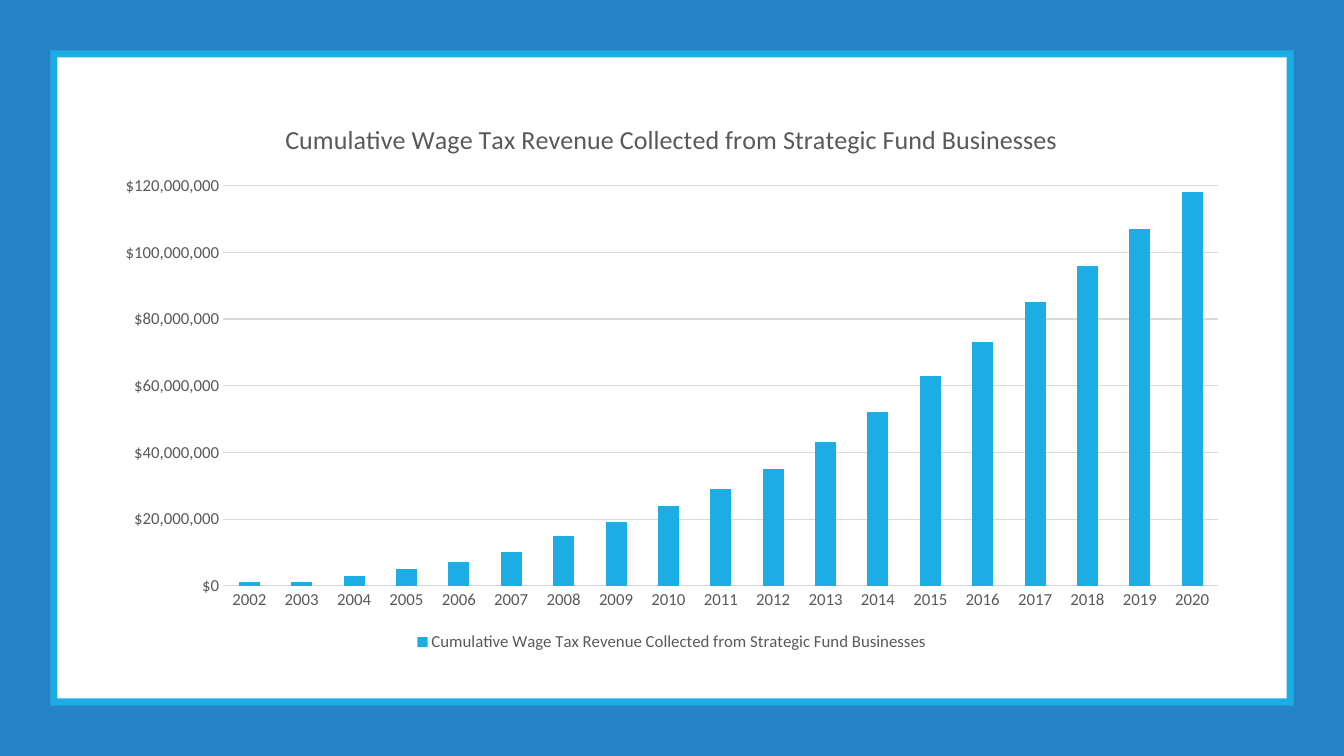
from pptx import Presentation
from pptx.chart.data import CategoryChartData as Data
from pptx.dml.color import RGBColor as Color
from pptx.enum.chart import XL_CHART_TYPE as Kind, XL_LEGEND_POSITION as Place
from pptx.enum.chart import XL_TICK_MARK as Tick
from pptx.enum.shapes import MSO_SHAPE as Shape
from pptx.util import Inches, Pt

WIDE, HIGH = 13.33, 7.5
BLUE, SKY, WHITE, GREY, RULE = "2683C6", "1CADE4", "FFFFFF", "595959", "D9D9D9"
NAME = "Cumulative Wage Tax Revenue Collected from Strategic Fund Businesses"
YEARS = range(2002, 2021)
MILLIONS = [1, 1, 3, 5, 7, 10, 15, 19, 24, 29, 35, 43, 52, 63, 73, 85, 96, 107, 118]


def paint(fmt, tone):
    fmt.solid()
    fmt.fore_color.rgb = Color.from_string(tone)


class Board:
    face = "Calibri"

    def __init__(self, deck):
        deck.slide_width, deck.slide_height = Inches(WIDE), Inches(HIGH)
        self.slide = deck.slides.add_slide(deck.slide_layouts[6])

    def inset(self, dx, dy):
        return [Inches(n) for n in (dx, dy, WIDE - 2 * dx, HIGH - 2 * dy)]

    def style(self, font, size):
        font.name, font.size, font.bold = self.face, Pt(size), False
        font.color.rgb = Color.from_string(GREY)

    def rule(self, line):
        paint(line.fill, RULE)
        line.width = Pt(0.75)

    def panel(self, gap, tone):
        box = self.slide.shapes.add_shape(Shape.RECTANGLE, *self.inset(gap, gap))
        box.shadow.inherit = False
        paint(box.fill, tone)
        box.line.fill.background()

    def axis(self, axis):
        self.style(axis.tick_labels.font, 12)
        axis.major_tick_mark = axis.minor_tick_mark = Tick.NONE

    def columns(self, dx, dy, name, cats, vals, top, step):
        data = Data(number_format='"$"#,##0')
        data.categories = [str(cat) for cat in cats]
        data.add_series(name, vals)
        chart = self.slide.shapes.add_chart(
            Kind.COLUMN_CLUSTERED, *self.inset(dx, dy), data).chart
        self.style(chart.font, 12)

        chart.has_title = True
        head = chart.chart_title.text_frame
        head.text = name
        self.style(head.paragraphs[0].font, 18.6)
        chart.chart_title.include_in_layout = False

        chart.has_legend = True
        chart.legend.position = Place.BOTTOM
        chart.legend.include_in_layout = False
        self.style(chart.legend.font, 12)

        plot = chart.plots[0]
        plot.gap_width, plot.vary_by_categories = 150, False
        paint(plot.series[0].format.fill, SKY)

        base, side = chart.category_axis, chart.value_axis
        self.axis(base)
        self.rule(base.format.line)
        self.axis(side)
        side.format.line.fill.background()
        side.minimum_scale, side.maximum_scale, side.major_unit = 0, top, step
        side.tick_labels.number_format = '"$"#,##0'
        side.tick_labels.number_format_is_linked = False
        self.rule(side.major_gridlines.format.line)


def main():
    deck = Presentation()
    board = Board(deck)
    for gap, tone in ((0, BLUE), (0.5, SKY), (0.57, WHITE)):
        board.panel(gap, tone)
    board.columns(1.02, 0.99, NAME, YEARS, [n * 10**6 for n in MILLIONS],
                  120 * 10**6, 20 * 10**6)
    deck.save("out.pptx")


if __name__ == "__main__":
    main()
